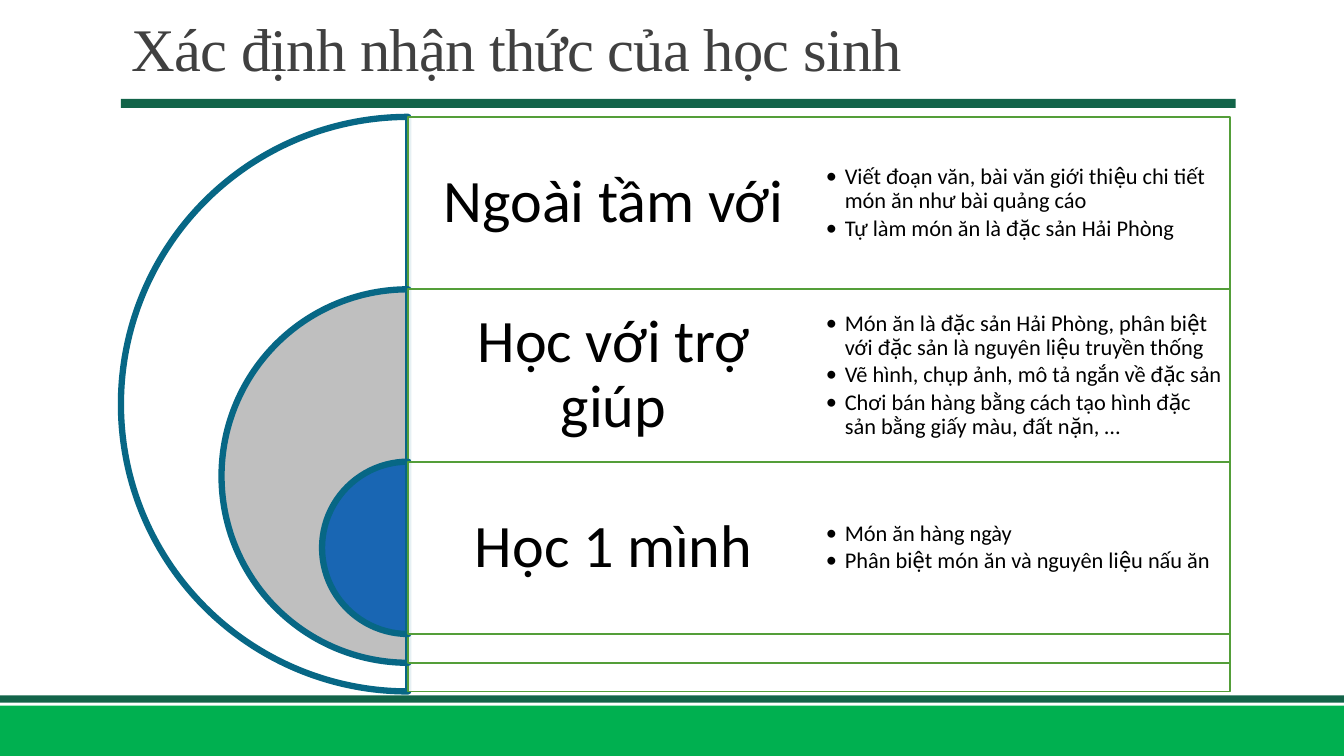
from dataclasses import dataclass

from lxml.etree import SubElement
from pptx import Presentation
from pptx.dml.color import RGBColor
from pptx.enum.shapes import MSO_SHAPE
from pptx.enum.text import MSO_ANCHOR, PP_ALIGN
from pptx.oxml.ns import qn
from pptx.util import Pt

COLORS = {
    "green": "00B050", "pine": "126449", "grey": "404040", "black": "000000",
    "white": "FFFFFF", "silver": "BFBFBF", "blue": "1966B3",
    "teal": "076785", "leaf": "549E39",
}

# Vietnamese letters are stored as a base vowel followed by its tone mark
VOWELS = {
    "a": "àảãáạ", "ă": "ằẳẵắặ", "â": "ầẩẫấậ", "e": "èẻẽéẹ", "ê": "ềểễếệ",
    "i": "ìỉĩíị", "o": "òỏõóọ", "ô": "ồổỗốộ", "ơ": "ờởỡớợ", "u": "ùủũúụ",
    "ư": "ừửữứự", "y": "ỳỷỹýỵ",
}
MARKS = ["̀", "̉", "̃", "́", "̣"]
TONES = {letter: vowel + mark for vowel, row in VOWELS.items()
         for letter, mark in zip(row, MARKS)}


@dataclass
class Box:
    left: float
    top: float
    width: float
    height: float


@dataclass
class Zone:
    title: str
    color: str
    items: list[str]


ZONES = [
    Zone("Ngoài tầm với", "white", [
        "Viết đoạn văn, bài văn giới thiệu chi tiết món ăn như bài quảng cáo",
        "Tự làm món ăn là đặc sản Hải Phòng"]),
    Zone("Học với trợ giúp", "silver", [
        "Món ăn là đặc sản Hải Phòng, phân biệt với đặc sản là nguyên liệu truyền thống",
        "Vẽ hình, chụp ảnh, mô tả ngắn về đặc sản",
        "Chơi bán hàng bằng cách tạo hình đặc sản bằng giấy màu, đất nặn, …"]),
    Zone("Học 1 mình", "blue", [
        "Món ăn hàng ngày",
        "Phân biệt món ăn và nguyên liệu nấu ăn"]),
]

BARS = [
    (Box(0, 504, 960, 36), "green"),
    (Box(0, 496.8, 960, 5.04), "pine"),
    (Box(86.4, 70.56, 796.32, 6.48), "pine"),
]

# Text formats
TITLE = {
    "frame": {"vertical_anchor": MSO_ANCHOR.BOTTOM},
    "para": {"line_spacing": 0.85},
    "font": {"size": Pt(43.2), "name": "Times New Roman"},
    "color": "grey",
}
HEAD = {
    "frame": {"vertical_anchor": MSO_ANCHOR.MIDDLE}, "inset": 13,
    "para": {"line_spacing": 0.9, "alignment": PP_ALIGN.CENTER},
    "font": {"size": Pt(43), "name": "Calibri"},
    "color": "black",
}
LIST = {
    "frame": {"vertical_anchor": MSO_ANCHOR.MIDDLE}, "inset": 5,
    "para": {"line_spacing": 0.9, "space_after": Pt(2.4)},
    "font": {"size": Pt(16), "name": "Calibri"},
    "color": "black", "indent": 13.5,
}

# Stacked half discs: rows share a height, discs shrink at an equal step
MID, TOP, ROW, DISC, STEP = 291.6, 83.52, 123.12, 410.4, 143.64
WIDE = 586.8


def rgb(name: str) -> RGBColor:
    return RGBColor.from_string(COLORS[name])


def apply(target: object, values: dict) -> None:
    for name, value in values.items():
        setattr(target, name, value)


def place(box: Box) -> list:
    return [Pt(side) for side in (box.left, box.top, box.width, box.height)]


def draw(slide, kind: MSO_SHAPE, box: Box, fill: str, line: str = "", width: float = 0):
    shape = slide.shapes.add_shape(kind, *place(box))
    shape.shadow.inherit = False
    shape.fill.solid()
    shape.fill.fore_color.rgb = rgb(fill)
    if line:
        shape.line.color.rgb = rgb(line)
        shape.line.width = Pt(width)
    else:
        shape.line.fill.background()
    return shape


def write(slide, box: Box, lines: list[str], style: dict) -> list:
    frame = slide.shapes.add_textbox(*place(box)).text_frame
    apply(frame, {"word_wrap": True, **style["frame"]})
    if "inset" in style:
        for side in ("left", "top", "right", "bottom"):
            setattr(frame, f"margin_{side}", Pt(style["inset"]))
    runs = []
    for count, line in enumerate(lines):
        para = frame.add_paragraph() if count else frame.paragraphs[0]
        apply(para, style["para"])
        if "indent" in style:
            props = para._p.get_or_add_pPr()
            props.set("marL", str(Pt(style["indent"])))
            props.set("indent", str(-Pt(style["indent"])))
            SubElement(props, qn("a:buFont")).set("typeface", style["font"]["name"])
            SubElement(props, qn("a:buChar")).set("char", "•")
        run = para.add_run()
        run.text = line.translate(str.maketrans(TONES))
        apply(run.font, style["font"])
        run.font.color.rgb = rgb(style["color"])
        runs.append(run)
    return runs


def main() -> None:
    deck = Presentation()
    apply(deck, {"slide_width": Pt(960), "slide_height": Pt(540)})
    slide = deck.slides.add_slide(deck.slide_layouts[6])

    # Bars and title
    for box, color in BARS:
        draw(slide, MSO_SHAPE.RECTANGLE, box, color)
    title = write(slide, Box(87, 9, 792, 54.72),
                  ["Xác định nhận thức của học sinh"], TITLE)[0]
    title.font._element.set("spc", "-50")

    # Half discs, panels and headings
    for rank, zone in enumerate(ZONES):
        top, size = TOP + rank * ROW, DISC - rank * STEP
        disc = draw(slide, MSO_SHAPE.PIE, Box(MID - size / 2, top, size, size),
                    zone.color, "teal", 4.5)
        disc.adjustments[0], disc.adjustments[1] = 54, 162
        panel = draw(slide, MSO_SHAPE.RECTANGLE, Box(MID, top, WIDE, size),
                     "white", "leaf", 1.25)
        tint = panel.fill._xPr.find(".//" + qn("a:srgbClr"))
        SubElement(tint, qn("a:alpha")).set("val", "90000")
        write(slide, Box(MID, top, WIDE / 2, ROW), [zone.title], HEAD)

    # Bullet lists
    for rank, zone in enumerate(ZONES):
        write(slide, Box(MID + WIDE / 2, TOP + rank * ROW, WIDE / 2, ROW), zone.items, LIST)

    deck.save("out.pptx")


if __name__ == "__main__":
    main()
